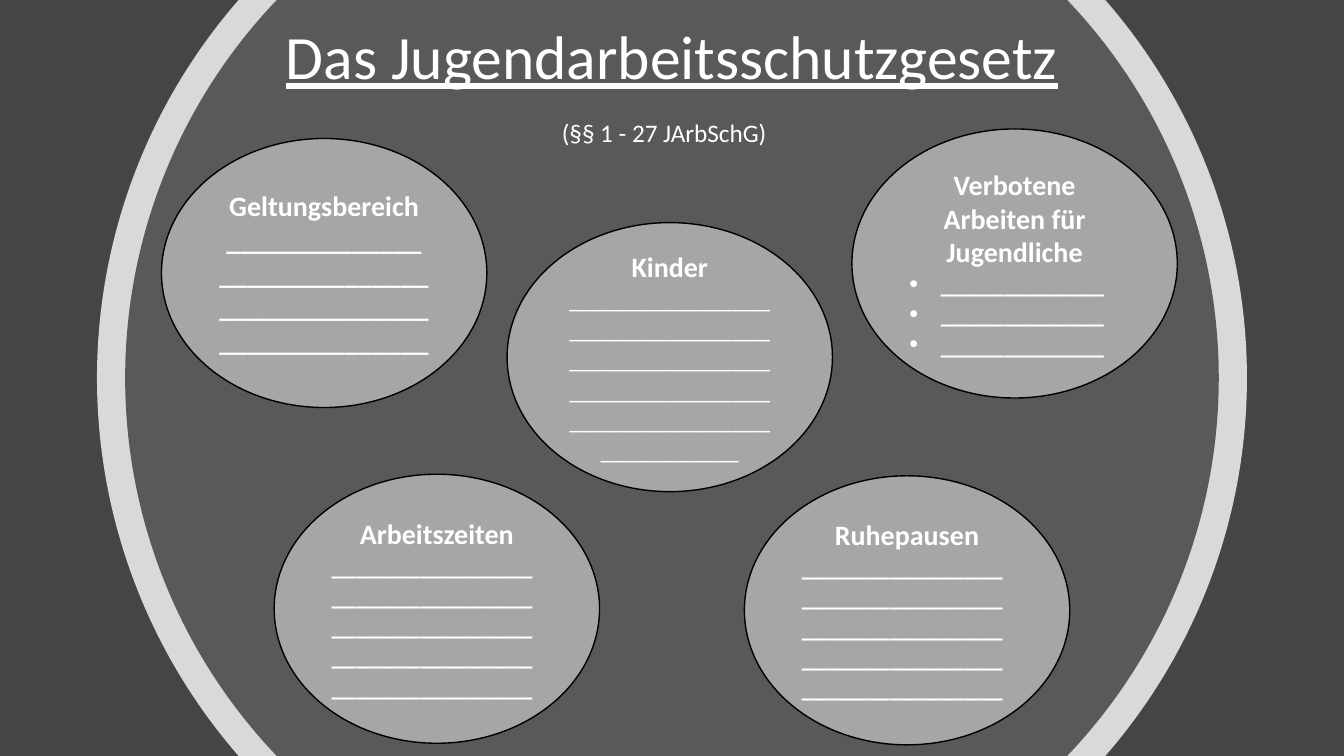
import math
from dataclasses import dataclass

from lxml import etree
from pptx import Presentation
from pptx.dml.color import RGBColor
from pptx.enum.shapes import MSO_SHAPE
from pptx.enum.text import MSO_ANCHOR, MSO_AUTO_SIZE, PP_ALIGN
from pptx.oxml.ns import qn
from pptx.util import Cm, Pt

OVAL = MSO_SHAPE.OVAL
MIDDLE = MSO_ANCHOR.MIDDLE
NO_FIT, GROW = MSO_AUTO_SIZE.NONE, MSO_AUTO_SIZE.SHAPE_TO_FIT_TEXT
LEFT, CENTER = PP_ALIGN.LEFT, PP_ALIGN.CENTER
WIDTH, HEIGHT = 33.87, 19.05


@dataclass(frozen=True)
class Theme:
    font: str = "Calibri"
    title: int = 44
    heading: int = 20
    body: int = 18
    background: RGBColor = RGBColor(0x45, 0x45, 0x45)
    disc: RGBColor = RGBColor(0x59, 0x59, 0x59)
    bubble: RGBColor = RGBColor(0xA6, 0xA6, 0xA6)
    outline: RGBColor = RGBColor(0, 0, 0)
    white: RGBColor = RGBColor(0xFF, 0xFF, 0xFF)


theme = Theme()


def write(tf, text, size, align=LEFT, bold=False, underline=False, bullet=False):
    """Fill the empty first paragraph of tf, or add a further one."""
    p = tf.paragraphs[0] if not tf.text else tf.add_paragraph()
    p.alignment = align
    if bullet:
        pPr = p._p.get_or_add_pPr()
        pPr.set("marL", str(Cm(0.79)))
        pPr.set("indent", str(-Cm(0.79)))
        etree.SubElement(pPr, qn("a:buFont"), typeface="Arial")
        etree.SubElement(pPr, qn("a:buChar"), char="•")
    r = p.add_run()
    r.text = text
    r.font.name, r.font.size = theme.font, Pt(size)
    r.font.bold, r.font.underline = bold, underline
    r.font.color.rgb = theme.white
    return p


def add_disc(shapes, radius, color):
    """Add a circle centred on the slide and cut off at its top and bottom edges."""
    cx, cy = WIDTH / 2, HEIGHT / 2
    half = math.asin(cy / radius)
    angles = [middle + turn for middle in (0, math.pi) for turn in (-half, 0, half)]
    points = [(cx + radius * math.cos(a), cy + radius * math.sin(a)) for a in angles]
    builder = shapes.build_freeform(Cm(points[0][0]), Cm(points[0][1]))
    builder.add_line_segments([(Cm(x), Cm(y)) for x, y in points[1:]], close=True)
    sp = builder.convert_to_shape()

    # Bend the side segments into arcs; the cut edges stay straight
    handle = 4 / 3 * math.tan(half / 4) * radius
    segments = list(sp.element.spPr.iter(qn("a:lnTo")))
    for i in (0, 1, 3, 4):
        (x1, y1), (x2, y2) = points[i], points[i + 1]
        a1, a2 = angles[i], angles[i + 1]
        curve = etree.Element(qn("a:cubicBezTo"))
        for x, y in ((x1 - handle * math.sin(a1), y1 + handle * math.cos(a1)),
                     (x2 + handle * math.sin(a2), y2 - handle * math.cos(a2)),
                     (x2, y2)):
            etree.SubElement(curve, qn("a:pt"), x=str(Cm(x) - sp.left), y=str(Cm(y) - sp.top))
        segments[i].getparent().replace(segments[i], curve)

    sp.shadow.inherit = False
    sp.fill.solid()
    sp.fill.fore_color.rgb = color
    sp.line.fill.background()
    return sp


prs = Presentation()
prs.slide_width, prs.slide_height = Cm(WIDTH), Cm(HEIGHT)
slide = prs.slides.add_slide(prs.slide_layouts[5])
shapes = slide.shapes
slide.background.fill.solid()
slide.background.fill.fore_color.rgb = theme.background

# Large disc with a translucent rim
rim = add_disc(shapes, 14.49, theme.white)
rim_color = rim.element.spPr.find(qn("a:solidFill"))[0]
etree.SubElement(rim_color, qn("a:alpha"), val="80000")
add_disc(shapes, 13.78, theme.disc)

# Title, brought in front of the discs
title = shapes.title
title.left, title.top, title.width, title.height = Cm(6.42), Cm(0.18), Cm(21.03), Cm(2.64)
title.element.getparent().append(title.element)
title.text_frame.auto_size = NO_FIT
title.text_frame.vertical_anchor = MIDDLE
p = write(title.text_frame, "Das Jugendarbeitsschutzgesetz", theme.title, CENTER, underline=True)
p.line_spacing = 0.9

# Topic bubbles: left, top, heading, lengths of the blanks, format of the blanks
bubbles = [
    (4.07, 3.49, "Geltungsbereich", [14, 45], dict(size=theme.heading, align=CENTER, bold=True)),
    (6.91, 11.95, "Arbeitszeiten", [80], dict(size=theme.body, bold=True)),
    (12.78, 5.61, "Kinder", [91], dict(size=theme.body, align=CENTER)),
    (21.47, 3.25, "Verbotene Arbeiten für Jugendliche", [13] * 3,
     dict(size=theme.body, bold=True, bullet=True)),
    (18.76, 11.99, "Ruhepausen", [80], dict(size=theme.body, bold=True)),
]
for left, top, heading, blanks, blank_format in bubbles:
    sp = shapes.add_shape(OVAL, Cm(left), Cm(top), Cm(8.2), Cm(6.78))
    sp.shadow.inherit = False
    sp.fill.solid()
    sp.fill.fore_color.rgb = theme.bubble
    sp.line.color.rgb = theme.outline
    sp.line.width = Pt(1)
    tf = sp.text_frame
    tf.word_wrap = True
    tf.vertical_anchor = MIDDLE
    write(tf, heading, theme.heading, CENTER, bold=True)
    for length in blanks:
        write(tf, "_" * length, **blank_format)

# Sections of the law
tf = shapes.add_textbox(Cm(13.91), Cm(2.84), Cm(5.92), Cm(1.02)).text_frame
tf.word_wrap = True
tf.auto_size = GROW
write(tf, "(§§ 1 - 27 JArbSchG)", theme.body)

prs.save("out.pptx")
